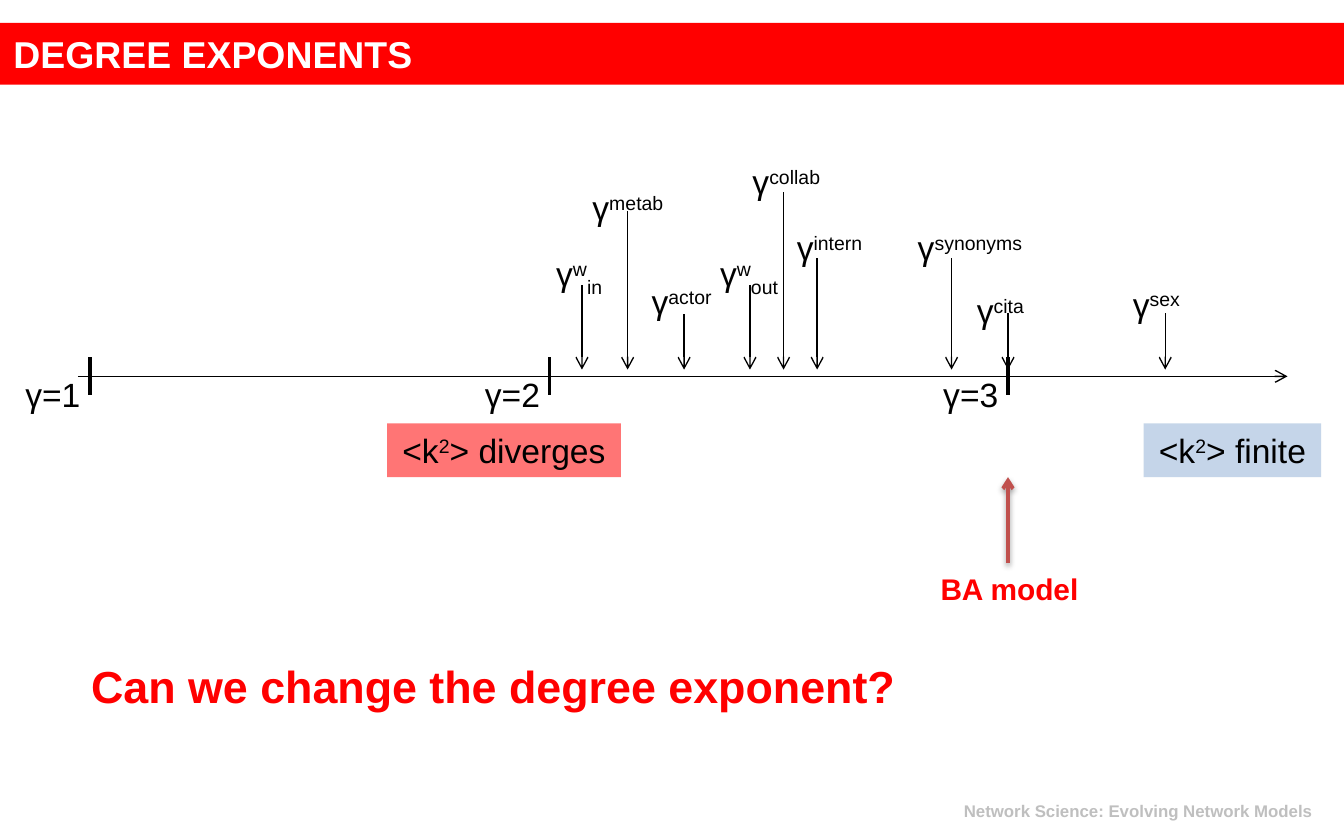
import pptx
import pptx.dml.color
import pptx.enum.shapes
import pptx.enum.text
import pptx.oxml.ns
import pptx.util
import lxml.etree

PX = 9144
FONT = "Arial"
COLORS = {
    "black": "000000",
    "white": "FFFFFF",
    "red": "FF0000",
    "blue": "95B3D7",
    "brick": "C0504D",
    "gray": "BFBFBF",
}
SUPER, SUB = 30000, -25000
ALIGN = pptx.enum.text.PP_ALIGN
QUALIFIED = pptx.oxml.ns.qn

NETWORKS = [
    ([("w", SUPER), ("in", SUB)], (346, 68, 60), (276, 97)),
    ([("w", SUPER), ("out", SUB)], (468, 68, 70), (401, 97)),
    ([("intern", SUPER)], (525, 49, 78), (550, 77)),
    ([("actor", SUPER)], (417, 89, 73), (451, 119)),
    ([("collab", SUPER)], (492, 0, 81), (525, 28)),
    ([("metab", SUPER)], (373, 19, 83), (409, 42)),
    ([("cita", SUPER)], (659, 96, 62), (692, 118)),
    ([("synonyms", SUPER)], (615, 49, 111), (650, 77)),
    ([("sex", SUPER)], (775, 91, 62), (809, 118)),
]
NETWORKS[0] = (NETWORKS[0][0], NETWORKS[0][1], (375, 97))
NETWORKS[1] = (NETWORKS[1][0], NETWORKS[1][1], (500, 97))


def color(name):
    return pptx.dml.color.RGBColor.from_string(COLORS[name])


def place(box):
    return [pptx.util.Emu(value * PX) for value in box]


def write(shape, pieces, size, ink="black", bold=False, align=ALIGN.LEFT, wrap=False):
    frame = shape.text_frame
    frame.word_wrap = wrap
    para = frame.paragraphs[0]
    para.alignment = align
    for text, baseline in pieces:
        span = para.add_run()
        span.text = text
        span.font.name = FONT
        span.font.size = pptx.util.Pt(size)
        span.font.bold = bold
        span.font.color.rgb = color(ink)
        if baseline:
            span.font._element.set("baseline", str(baseline))


def label(page, box, pieces, size, **style):
    write(page.shapes.add_textbox(*place(box)), pieces, size, **style)


def line(page, start, end, width=0.75, ink="black", arrow=False):
    connector = page.shapes.add_connector(
        pptx.enum.shapes.MSO_CONNECTOR.STRAIGHT, *place((*start, *end)))
    connector.line.width = pptx.util.Pt(width)
    connector.line.color.rgb = color(ink)
    if arrow:
        outline = connector.line._get_or_add_ln()
        lxml.etree.SubElement(outline, QUALIFIED("a:tailEnd"), type="arrow")
    return lxml.etree.SubElement(connector._element.spPr, QUALIFIED("a:effectLst"))


def title_band(page, box):
    title = page.shapes.title
    title.left, title.top, title.width, title.height = place(box)
    title.fill.solid()
    title.fill.fore_color.rgb = color("red")
    title.text_frame.auto_size = pptx.enum.text.MSO_AUTO_SIZE.NONE
    title.text_frame.vertical_anchor = pptx.enum.text.MSO_ANCHOR.MIDDLE
    write(title, [("DEGREE EXPONENTS", 0)], 20, "white", True, wrap=True)


def exponent_axis(page, box):
    left, top, width, height = box
    axis = top + height
    line(page, (left, axis), (left + width, axis), arrow=True)
    for index in range(3):
        tick = left + 9 + round(index * 341.5)
        line(page, (tick, axis - 14), (tick, axis + 14), 1.75)
        label(page, (tick - 58, axis - 7, 64, 40), [(f"γ={index + 1}", 0)], 18)
    for marks, (x, y, label_width), (arrow_x, arrow_y) in NETWORKS:
        label(page, (left + x, top + y, label_width, 40), [("γ", 0)] + marks, 18)
        line(page, (left + arrow_x, top + arrow_y), (left + arrow_x, axis - 5), arrow=True)


def moment_tag(page, box, word, fill):
    tag = page.shapes.add_shape(pptx.enum.shapes.MSO_SHAPE.RECTANGLE, *place(box))
    tag.shadow.inherit = False
    tag.line.fill.background()
    tag.fill.solid()
    tag.fill.fore_color.rgb = color(fill)
    swatch = tag._element.spPr.find(".//" + QUALIFIED("a:srgbClr"))
    lxml.etree.SubElement(swatch, QUALIFIED("a:alpha"), val="54000")
    write(tag, [("<k", 0), ("2", SUPER), (f"> {word}", 0)], 18, align=ALIGN.CENTER)


def model_pointer(page, box):
    left, top, width, height = box
    effects = line(page, (left + 60, top + 64), (left + 60, top), 2, "brick", arrow=True)
    shadow = lxml.etree.SubElement(
        effects, QUALIFIED("a:outerShdw"), blurRad="39370", dist="20320",
        dir="5400000", rotWithShape="0")
    tint = lxml.etree.SubElement(shadow, QUALIFIED("a:srgbClr"), val=COLORS["black"])
    lxml.etree.SubElement(tint, QUALIFIED("a:alpha"), val="38000")
    label(page, (left, top + 65, width, height - 65), [("BA model", 0)], 16,
          ink="red", bold=True)


def main():
    deck = pptx.Presentation()
    deck.slide_width, deck.slide_height = place((1000, 625))
    page = deck.slides.add_slide(deck.slide_layouts[5])
    title_band(page, (0, 17, 1000, 46))
    exponent_axis(page, (58, 115, 900, 165))
    moment_tag(page, (288, 315, 174, 40), "diverges", "red")
    moment_tag(page, (851, 315, 132, 40), "finite", "blue")
    model_pointer(page, (690, 355, 124, 102))
    label(page, (58, 485, 624, 51), [("Can we change the degree exponent?", 0)], 24,
          ink="red", bold=True)
    label(page, (617, 591, 369, 25), [("Network Science: Evolving Network Models", 0)], 9,
          ink="gray", bold=True, align=ALIGN.RIGHT, wrap=True)
    deck.save("out.pptx")


if __name__ == "__main__":
    main()
